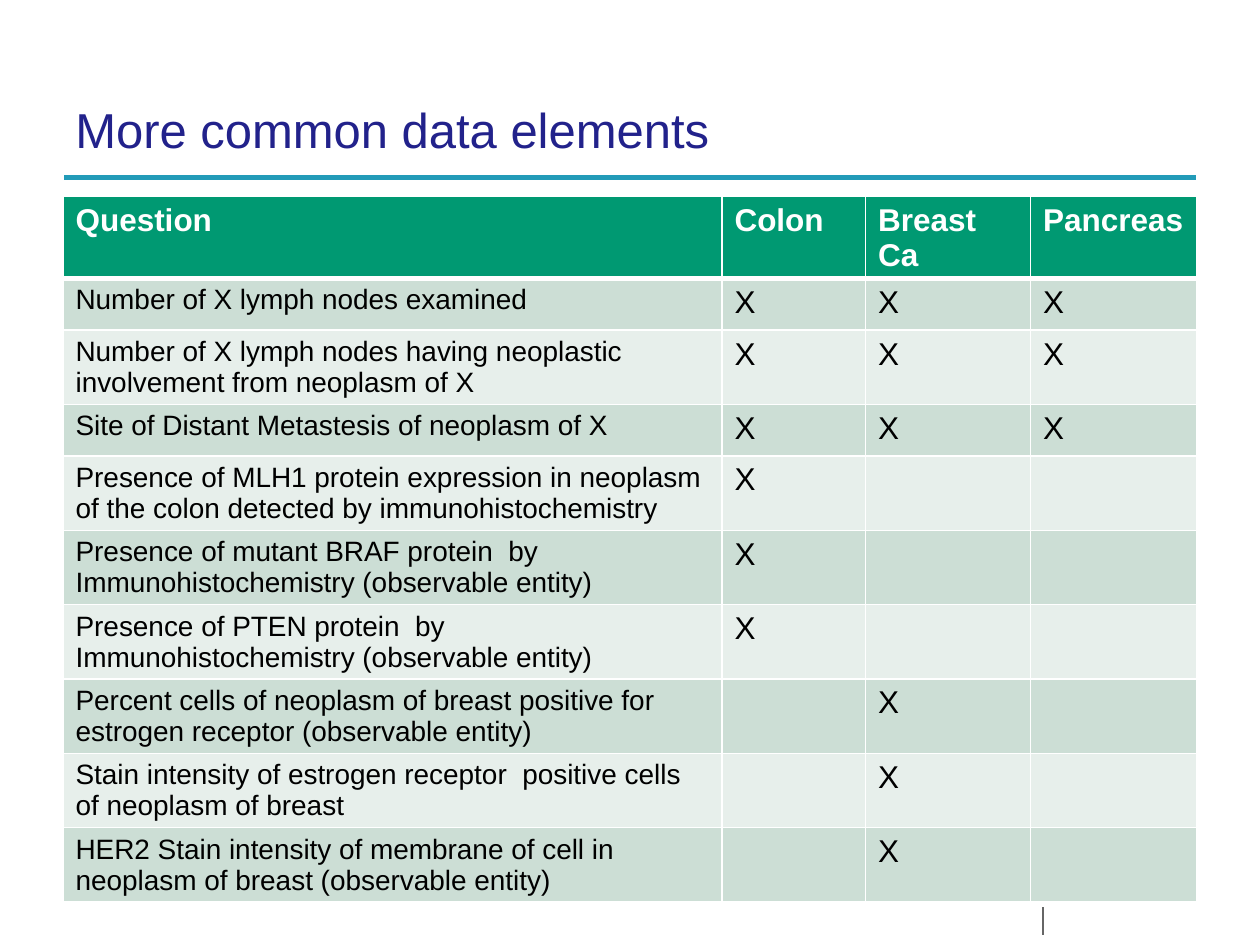
from lxml import etree
from pptx import Presentation
from pptx.dml.color import RGBColor
from pptx.enum.shapes import MSO_CONNECTOR as Connector
from pptx.enum.text import MSO_ANCHOR as Anchor
from pptx.oxml.ns import qn
from pptx.util import Inches, Pt

FONT = "Arial"
WHITE, BLACK, NAVY, TEAL, GRAY = "FFFFFF", "000000", "22228B", "229BB8", "666666"
HEADER_GREEN, BANDS = "009972", ("CCDED5", "E7EFEB")

COLUMN_WIDTHS = (5.23, 1.14, 1.31, 1.32)
HEADER_HEIGHT, ONE_LINE_HEIGHT, TWO_LINE_HEIGHT = 0.65, 0.41, 0.59
LINE_LENGTH = 50  # characters that fit on one line of the question column
HEADINGS = ("Question", "Colon", "Breast Ca", "Pancreas")
# Each question with its marks for colon, breast and pancreas
QUESTIONS = (
    ("Number of X lymph nodes examined", "X", "X", "X"),
    ("Number of X lymph nodes having neoplastic involvement from neoplasm of X", "X", "X", "X"),
    ("Site of Distant Metastesis of neoplasm of X", "X", "X", "X"),
    ("Presence of MLH1 protein expression in neoplasm of the colon detected by "
     "immunohistochemistry", "X", "", ""),
    ("Presence of mutant BRAF protein  by Immunohistochemistry (observable entity)", "X", "", ""),
    ("Presence of PTEN protein  by Immunohistochemistry (observable entity)", "X", "", ""),
    ("Percent cells of neoplasm of breast positive for estrogen receptor "
     "(observable entity)", "", "X", ""),
    ("Stain intensity of estrogen receptor  positive cells of neoplasm of breast", "", "X", ""),
    ("HER2 Stain intensity of membrane of cell in neoplasm of breast "
     "(observable entity)", "", "X", ""),
)


def color(hex_value):
    return RGBColor.from_string(hex_value)


def set_font(paragraph, size, hex_value, bold=False):
    font = paragraph.font
    font.name, font.size, font.bold = FONT, Pt(size), bold
    font.color.rgb = color(hex_value)


def add_rule(slide, x1, y1, x2, y2, hex_value, width):
    rule = slide.shapes.add_connector(
        Connector.STRAIGHT, Inches(x1), Inches(y1), Inches(x2), Inches(y2))
    rule.line.color.rgb = color(hex_value)
    rule.line.width = Pt(width)
    etree.SubElement(rule._element.spPr, qn("a:effectLst"))


def set_borders(cell, top, bottom):
    properties = cell._tc.get_or_add_tcPr()
    for side, width in (("L", 1), ("R", 1), ("T", top), ("B", bottom)):
        border = etree.SubElement(properties, qn(f"a:ln{side}"), w=str(Pt(width)))
        fill = etree.SubElement(border, qn("a:solidFill"))
        etree.SubElement(fill, qn("a:srgbClr"), val=WHITE)


def row_height(question):
    if question == HEADINGS[0]:
        return HEADER_HEIGHT
    return TWO_LINE_HEIGHT if len(question) > LINE_LENGTH else ONE_LINE_HEIGHT


def add_title(slide, left, top, width, height):
    title = slide.shapes.add_textbox(
        Inches(left), Inches(top), Inches(width), Inches(height))
    frame = title.text_frame
    frame.word_wrap = True
    frame.vertical_anchor = Anchor.MIDDLE
    frame.text = "More common data elements"
    set_font(frame.paragraphs[0], 28, NAVY)


def add_question_table(slide, left, top):
    rows = (HEADINGS, *QUESTIONS)
    heights = [row_height(texts[0]) for texts in rows]
    table = slide.shapes.add_table(
        len(rows), len(HEADINGS), Inches(left), Inches(top),
        Inches(sum(COLUMN_WIDTHS)), Inches(sum(heights))).table
    for column, width in zip(table.columns, COLUMN_WIDTHS):
        column.width = Inches(width)

    for r, texts in enumerate(rows):
        table.rows[r].height = Inches(heights[r])
        is_header = r == 0
        for c, text in enumerate(texts):
            cell = table.cell(r, c)
            cell.margin_bottom = 0
            set_borders(cell, top=3 if r == 1 else 1, bottom=3 if is_header else 1)
            cell.fill.solid()
            cell.fill.fore_color.rgb = color(HEADER_GREEN if is_header else BANDS[(r - 1) % 2])
            if text:
                cell.text = text
                size = 16 if c == 0 and not is_header else 18
                set_font(cell.text_frame.paragraphs[0], size,
                         WHITE if is_header else BLACK, is_header)


def build():
    deck = Presentation()
    deck.slide_width, deck.slide_height = Inches(10), Inches(7.5)
    slide = deck.slides.add_slide(deck.slide_layouts[6])
    # Footer divider and rule under the title
    add_rule(slide, 8.28, 7.2, 8.28, 7.42, GRAY, 1)
    add_rule(slide, 0.51, 1.41, 9.49, 1.41, TEAL, 3)
    add_title(slide, 0.5, 0.71, 9, 0.63)
    add_question_table(slide, 0.5, 1.56)
    deck.save("out.pptx")


if __name__ == "__main__":
    build()
